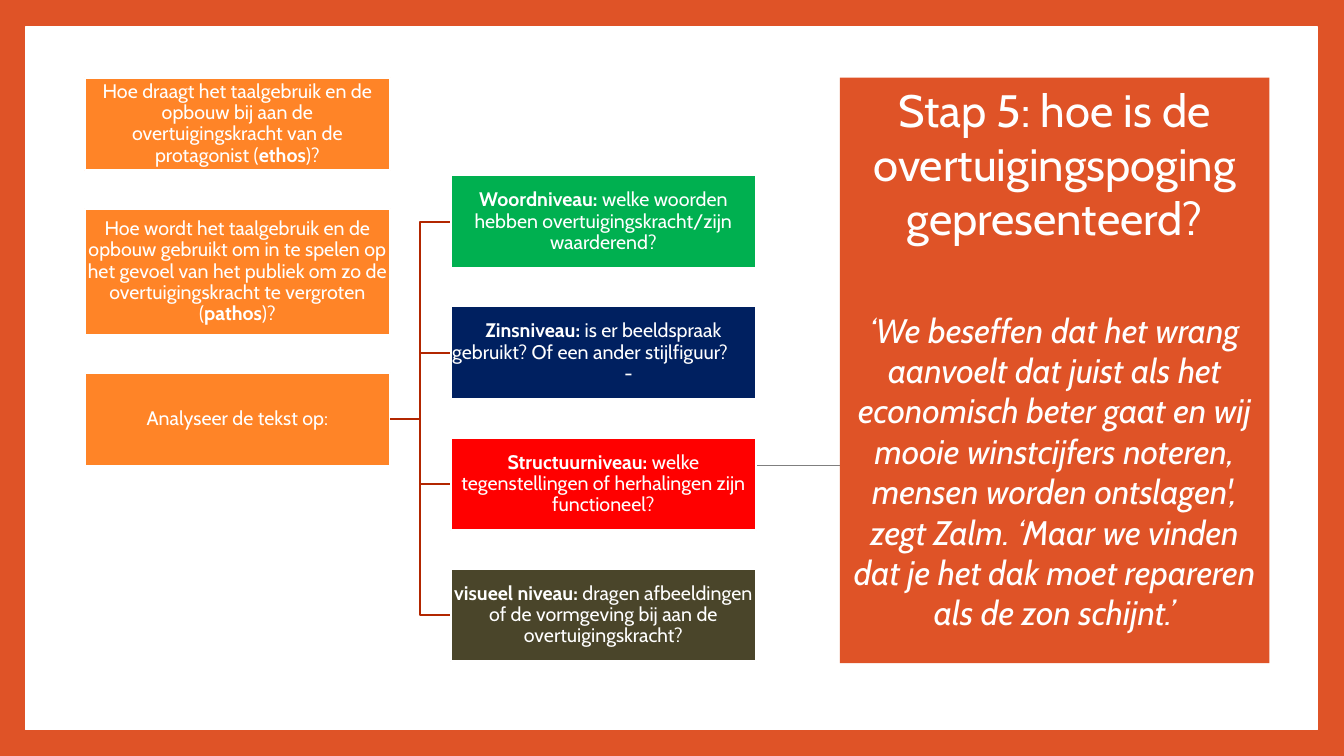
from pptx import Presentation
from pptx.dml.color import RGBColor
from pptx.enum.shapes import MSO_CONNECTOR, MSO_SHAPE
from pptx.enum.text import MSO_ANCHOR, MSO_AUTO_SIZE, PP_ALIGN
from pptx.oxml.ns import qn
from pptx.util import Inches, Pt
from lxml.etree import SubElement

RUST = RGBColor(0xDF, 0x53, 0x27)
BRICK = RGBColor(0xB2, 0x26, 0x00)
ORANGE = RGBColor(0xFF, 0x84, 0x27)
GREEN = RGBColor(0x00, 0xB0, 0x50)
NAVY = RGBColor(0x00, 0x20, 0x60)
RED = RGBColor(0xFF, 0x00, 0x00)
OLIVE = RGBColor(0x4A, 0x45, 0x2A)
GREY = RGBColor(0x7F, 0x7F, 0x7F)
WHITE = RGBColor(0xFF, 0xFF, 0xFF)

BOX_WIDTH = 3.03
BOX_HEIGHT = 0.92
GAP = 0.38
QUESTIONS_LEFT, QUESTIONS_TOP = 0.84, 0.77
LEVELS_LEFT, LEVELS_TOP = 4.47, 1.74

QUESTIONS = [
    (BOX_HEIGHT, [
        ("Hoe draagt het taalgebruik en de opbouw bij aan de "
         "overtuigingskracht van de protagonist (", False),
        ("ethos", True), (")?", False)]),
    (1.25, [
        ("Hoe wordt het taalgebruik en de opbouw gebruikt om in te spelen op "
         "het gevoel van het publiek om zo de overtuigingskracht te "
         "vergroten (", False),
        ("pathos", True), (")?", False)]),
    (BOX_HEIGHT, [("Analyseer de tekst op:", False)]),
]
LEVELS = [
    (GREEN, "Woordniveau:",
     " welke woorden hebben overtuigingskracht/zijn waarderend?"),
    (NAVY, "Zinsniveau:",
     " is er beeldspraak gebruikt? Of een ander stijlfiguur?\t \t-"),
    (RED, "Structuurniveau:",
     " welke tegenstellingen of herhalingen zijn functioneel?"),
    (OLIVE, "visueel niveau:",
     " dragen afbeeldingen of de vormgeving bij aan de overtuigingskracht?"),
]
HEADING = "Stap 5: hoe is de overtuigingspoging gepresenteerd?"
QUOTE = ("‘We beseffen dat het wrang aanvoelt dat juist als het economisch "
         "beter gaat en wij mooie winstcijfers noteren, mensen worden "
         "ontslagen', zegt Zalm. ‘Maar we vinden dat je het dak moet "
         "repareren als de zon schijnt.’")


class SlideBuilder:
    font_name = "Cabin"

    def __init__(self, page):
        self.page = page

    def background(self, color):
        fill = self.page.background.fill
        fill.solid()
        fill.fore_color.rgb = color

    def box(self, left, top, width, height, color, spans=(), line_width=1.5):
        box = self.page.shapes.add_shape(
            MSO_SHAPE.RECTANGLE, Inches(left), Inches(top),
            Inches(width), Inches(height))
        box.shadow.inherit = False
        box.fill.solid()
        box.fill.fore_color.rgb = color
        box.line.color.rgb = WHITE
        box.line.width = Pt(line_width)
        if spans:
            self.frame(box.text_frame, MSO_ANCHOR.MIDDLE, 0.01, 0.01)
            para = box.text_frame.paragraphs[0]
            self.style(para, 14, 0.9)
            for text, bold in spans:
                span = para.add_run()
                span.text = text
                span.font.bold = bold

    def frame(self, frame, anchor, side, top):
        frame.word_wrap = True
        frame.auto_size = MSO_AUTO_SIZE.NONE
        frame.vertical_anchor = anchor
        frame.margin_left = frame.margin_right = Inches(side)
        frame.margin_top = frame.margin_bottom = Inches(top)

    def style(self, para, size, spacing):
        para.alignment = PP_ALIGN.CENTER
        para.line_spacing = spacing
        para.font.name = self.font_name
        para.font.size = Pt(size)
        para.font.color.rgb = WHITE

    def connector(self, kind, start, end, color, width):
        connector = self.page.shapes.add_connector(
            kind, *(Inches(value) for value in (*start, *end)))
        connector.line.color.rgb = color
        connector.line.width = Pt(width)
        SubElement(connector._element.spPr, qn("a:effectLst"))

    def title(self, left, top, width, height, heading, quote):
        title = self.page.shapes.title
        title.left, title.top = Inches(left), Inches(top)
        title.width, title.height = Inches(width), Inches(height)
        title.fill.solid()
        title.fill.fore_color.rgb = RUST
        frame = title.text_frame
        self.frame(frame, MSO_ANCHOR.TOP, 0.1, 0.07)
        frame.text = heading
        self.style(frame.paragraphs[0], 32.4, 0.99)
        para = frame.add_paragraph()
        para.text = quote
        self.style(para, 24.3, 0.99)
        para.font.italic = True
        para.space_before = Pt(46)
        tree = self.page.shapes._spTree
        tree.remove(title._element)
        tree.append(title._element)


def main():
    deck = Presentation()
    deck.slide_width, deck.slide_height = Inches(13.33), Inches(7.5)
    builder = SlideBuilder(deck.slides.add_slide(deck.slide_layouts[5]))
    builder.background(RUST)
    builder.box(0.25, 0.27, 12.82, 6.97, WHITE, line_width=1)
    builder.connector(MSO_CONNECTOR.STRAIGHT, (7.38, 4.62), (11.99, 4.62),
                      GREY, 0.79)
    builder.title(8.33, 0.77, 4.26, 5.81, HEADING, QUOTE)

    top = QUESTIONS_TOP
    for height, spans in QUESTIONS:
        builder.box(QUESTIONS_LEFT, top, BOX_WIDTH, height, ORANGE, spans)
        branch = (QUESTIONS_LEFT + BOX_WIDTH, top + height / 2)
        top += height + GAP

    for index, (color, label, question) in enumerate(LEVELS):
        top = LEVELS_TOP + index * (BOX_HEIGHT + GAP)
        builder.connector(MSO_CONNECTOR.ELBOW, branch,
                          (LEVELS_LEFT, top + BOX_HEIGHT / 2), BRICK, 1.5)
        builder.box(LEVELS_LEFT, top, BOX_WIDTH, BOX_HEIGHT, color,
                    [(label, True), (question, False)])
    deck.save("out.pptx")


if __name__ == "__main__":
    main()
